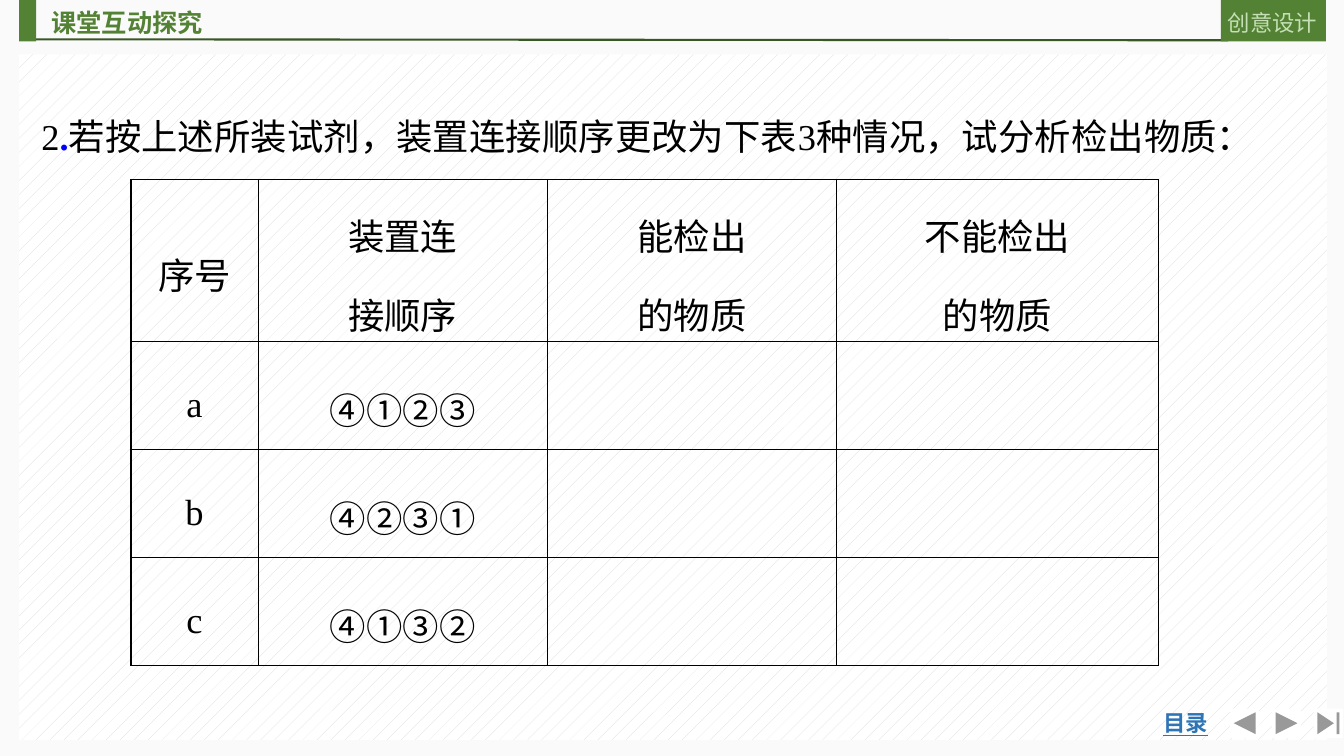
import pptx
import pptx.util
import pptx.dml.color
import pptx.enum.dml
import pptx.enum.shapes
import pptx.enum.text
import pptx.oxml.ns
import lxml.etree

WIDE, HIGH = 13.33, 7.5
COLORS = {
    "page": "FAFAFA", "white": "FFFFFF", "hatch": "D9D9D9", "green": "548235",
    "dark": "385723", "pale": "C5E0B4", "blue": "2E75B6", "dot": "0000FF",
    "black": "000000",
}
SANS, SERIF = "Noto Sans CJK SC", "Times New Roman"
SHAPE = pptx.enum.shapes.MSO_SHAPE
ALIGN = pptx.enum.text.PP_ALIGN
ANCHOR = pptx.enum.text.MSO_ANCHOR
Inches, Pt = pptx.util.Inches, pptx.util.Pt
qn = pptx.oxml.ns.qn

HEADS = ["序号", "装置连\n接顺序", "能检出\n的物质", "不能检出\n的物质"]
ORDERS = {"a": "④①②③", "b": "④②③①", "c": "④①③②"}
COLS = [1.26, 2.87, 2.87, 3.19]
ROWS = [1.61, 1.07, 1.07, 1.07]


def rgb(name):
    return pptx.dml.color.RGBColor.from_string(COLORS[name])


def style(font, size, color, face=SANS, bold=False):
    font.size, font.bold, font.name = Pt(size), bold, face
    font.color.rgb = rgb(color)
    # East Asian glyphs take their face from a:ea
    east = lxml.etree.Element(qn("a:ea"), typeface=SANS)
    font._element.find(qn("a:latin")).addnext(east)


def block(slide, kind, box, color):
    shape = slide.shapes.add_shape(kind, *map(Inches, box))
    shape.shadow.inherit = False
    shape.line.fill.background()
    shape.fill.solid()
    shape.fill.fore_color.rgb = rgb(color)
    return shape


def label(slide, box, text, size, color, bold=False, wrap=True):
    frame = slide.shapes.add_textbox(*map(Inches, box)).text_frame
    frame.word_wrap = wrap
    para = frame.paragraphs[0]
    para.text = text
    style(para.font, size, color, bold=bold)
    return para


def panel(slide, box):
    fill = block(slide, SHAPE.RECTANGLE, box, "white").fill
    fill.patterned()
    fill.pattern = pptx.enum.dml.MSO_PATTERN.PERCENT_5
    fill.fore_color.rgb, fill.back_color.rgb = rgb("hatch"), rgb("white")


def header(slide, left, width, height):
    right = left + width
    rule = slide.shapes.add_connector(
        pptx.enum.shapes.MSO_CONNECTOR.STRAIGHT,
        *map(Inches, (left, height - 0.02, right - 0.97, height - 0.01)))
    rule.line.color.rgb, rule.line.width = rgb("dark"), Pt(1.5)
    lxml.etree.SubElement(rule._element.spPr, qn("a:effectLst"))
    block(slide, SHAPE.RECTANGLE, (left, 0, 0.17, height), "green")
    block(slide, SHAPE.RECTANGLE, (right - 1.04, 0, 1.04, height), "green")
    label(slide, (right - 1.07, 0.04, 1.18, 0.37), "创意设计", 16, "pale")

    title = slide.shapes.title
    title.left, title.top, title.width, title.height = map(
        Inches, (left + 0.22, 0.02, 5.83, 0.4))
    frame = title.text_frame
    frame.text = "课堂互动探究"
    frame.vertical_anchor = ANCHOR.TOP
    frame.auto_size = pptx.enum.text.MSO_AUTO_SIZE.NONE
    para = frame.paragraphs[0]
    para.alignment = ALIGN.LEFT
    style(para.font, 18, "green", bold=True)


def footer(slide, left, top):
    link = label(slide, (left, top, 0.65, 0.37), "目录", 16, "blue", True, False)
    link.font.underline = True
    kinds = (SHAPE.ACTION_BUTTON_BACK_OR_PREVIOUS,
             SHAPE.ACTION_BUTTON_FORWARD_OR_NEXT, SHAPE.ACTION_BUTTON_END)
    for i, kind in enumerate(kinds):
        box = (left + 0.76 + 0.415 * i, top + 0.04, 0.29, 0.29)
        block(slide, kind, box, "white")


def question(slide, box):
    frame = slide.shapes.add_textbox(*map(Inches, box)).text_frame
    frame.word_wrap = True
    frame.margin_left = frame.margin_right = Inches(0.13)
    frame.margin_top = frame.margin_bottom = Inches(0.07)
    para = frame.paragraphs[0]
    para.alignment, para.line_spacing = ALIGN.JUSTIFY, 1.5
    parts = [
        ("2", "black", False), (".", "dot", True),
        ("若按上述所装试剂，装置连接顺序更改为下表3种情况，试分析检出物质：",
         "black", False),
    ]
    for text, color, bold in parts:
        run = para.add_run()
        run.text = text
        style(run.font, 26, color, SERIF, bold)


def border(cell):
    props = cell._tc.get_or_add_tcPr()
    for side in ("lnL", "lnR", "lnT", "lnB"):
        line = lxml.etree.SubElement(props, qn("a:" + side), w=str(Pt(1)))
        fill = lxml.etree.SubElement(line, qn("a:solidFill"))
        lxml.etree.SubElement(fill, qn("a:srgbClr"), val=COLORS["black"])


def grid(slide, left, top):
    data = [HEADS] + [[key, order, "", ""] for key, order in ORDERS.items()]
    table = slide.shapes.add_table(
        len(ROWS), len(COLS),
        *map(Inches, (left, top, sum(COLS), sum(ROWS)))).table
    table.first_row = table.horz_banding = False
    for col, width in zip(table.columns, COLS):
        col.width = Inches(width)
    for row, height, texts in zip(table.rows, ROWS, data):
        row.height = Inches(height)
        for cell, text in zip(row.cells, texts):
            cell.text = text
            cell.vertical_anchor = ANCHOR.MIDDLE
            cell.margin_left = cell.margin_right = Inches(0.06)
            cell.margin_top = cell.margin_bottom = 0
            border(cell)
            cell.fill.background()
            face = SANS if text in ORDERS.values() else SERIF
            for para in cell.text_frame.paragraphs:
                para.alignment, para.line_spacing = ALIGN.CENTER, 1.5
                style(para.font, 26, "black", face)


def main():
    deck = pptx.Presentation()
    deck.slide_width, deck.slide_height = Inches(WIDE), Inches(HIGH)
    slide = deck.slides.add_slide(deck.slide_layouts[5])
    back = slide.background.fill
    back.solid()
    back.fore_color.rgb = rgb("page")
    panel(slide, (0.19, 0.54, 12.97, 6.8))
    header(slide, 0.19, 12.96, 0.41)
    footer(slide, 11.44, 6.99)
    question(slide, (0.28, 0.85, 12.75, 0.71))
    grid(slide, 1.3, 1.78)
    deck.save("out.pptx")


if __name__ == "__main__":
    main()
